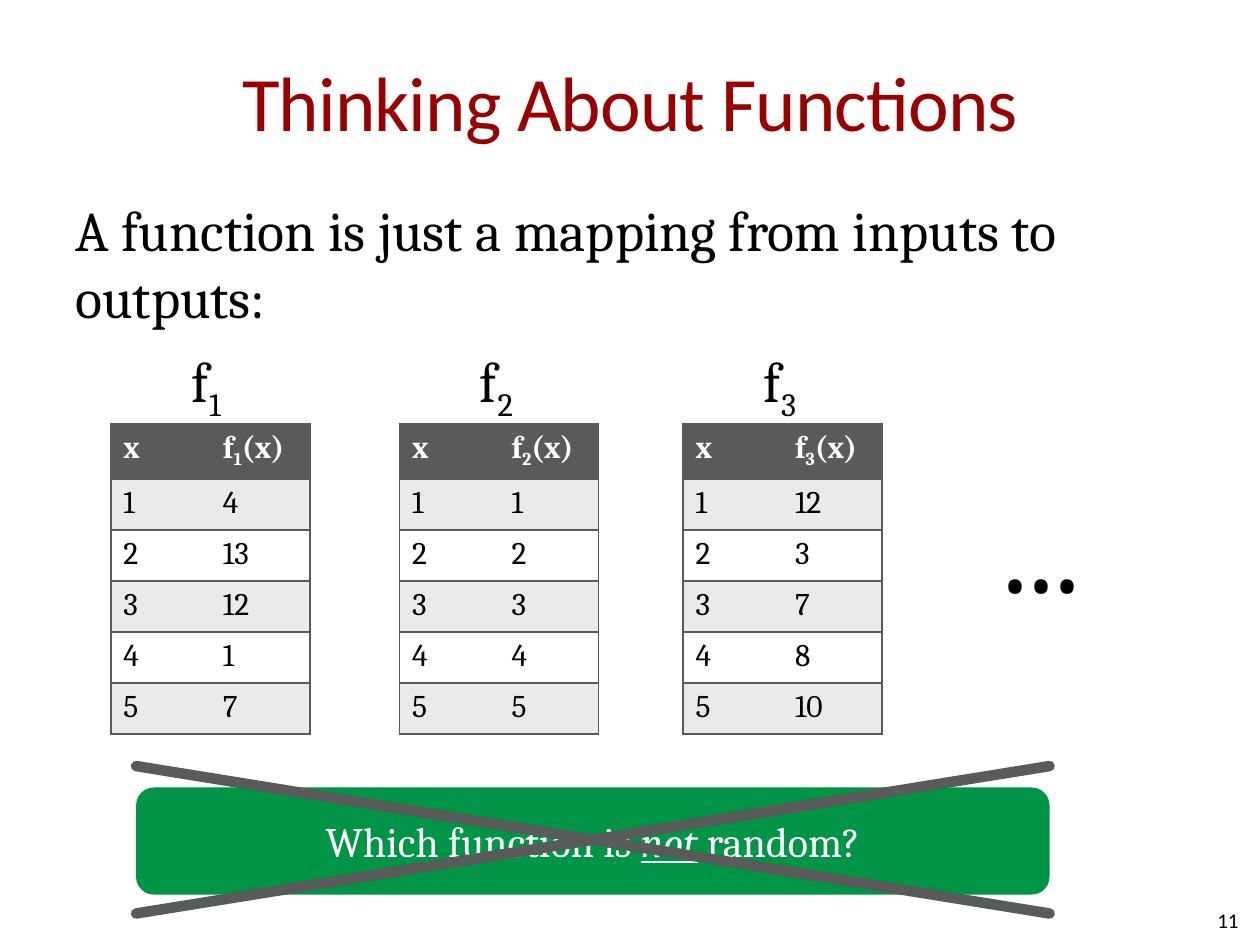
from pptx import Presentation
from pptx.dml.color import RGBColor
from pptx.enum.shapes import MSO_CONNECTOR, MSO_SHAPE
from pptx.enum.text import MSO_ANCHOR, PP_ALIGN
from pptx.oxml.ns import qn
from pptx.util import Inches, Pt
from lxml import etree

LEFT, MID, RIGHT = PP_ALIGN.LEFT, PP_ALIGN.CENTER, PP_ALIGN.RIGHT
TOP, CENTER = MSO_ANCHOR.TOP, MSO_ANCHOR.MIDDLE
ROUND, LINE = MSO_SHAPE.ROUNDED_RECTANGLE, MSO_CONNECTOR.STRAIGHT

# Content: a run is (text, style); style is "", "sub" or "stress"
TITLE = [("Thinking About Functions", "")]
LEAD = [("A function is just a mapping from inputs to outputs:", "")]
MAPS = [("1", [4, 13, 12, 1, 7]),
        ("2", [1, 2, 3, 4, 5]),
        ("3", [12, 3, 7, 8, 10])]
MORE = [("...", "")]
ASK = [("Which function is ", ""), ("not", "stress"), (" random?", "")]
PAGE = [("11", "")]

THEME = {
    "head": "Calibri", "body": "Cambria",
    "red": "990000", "ink": "000000", "paper": "FFFFFF",
    "gray": "595A5A", "band": "EAEAEA", "green": "009446",
    "title": 44, "lead": 32, "cell": 18, "ask": 24, "dots": 72, "page": 12,
    "rule": 1, "cross": 6,
}

# Layout in inches
WIDE, HIGH = 10, 7.5
EDGE = WIDE * 0.05
LEFTS = [0.88, 3.17, 5.42]
GRID_TOP, COL, ROW = 3.36, 0.79, 0.405
LABEL_TOP, LABEL_IN = 2.75, 0.64
BOX = (1.08, 6.25, 7.25, 0.85)
CROSS_TOP, CROSS_END = 6.08, 7.25


def color(name):
    return RGBColor.from_string(THEME[name])


def write(frame, runs, size, ink="ink", face="body", align=LEFT, bold=False):
    para = frame.paragraphs[0]
    para.alignment = align
    font = para.font
    font.name, font.size, font.bold = THEME[face], Pt(THEME[size]), bold
    font.color.rgb = color(ink)
    for text, style in runs:
        run = para.add_run()
        run.text = text
        if style == "sub":
            run.font._element.set("baseline", "-25000")
        elif style == "stress":
            run.font.italic = run.font.underline = True
    return para


def inset(frame, side, end):
    frame.margin_left = frame.margin_right = Inches(side)
    frame.margin_top = frame.margin_bottom = Inches(end)


def add_text(slide, place, runs, size, pad=(0, 0), anchor=TOP, wrap=True, **look):
    box = slide.shapes.add_textbox(*map(Inches, place))
    frame = box.text_frame
    frame.word_wrap, frame.vertical_anchor = wrap, anchor
    inset(frame, *pad)
    return write(frame, runs, size, **look)


def rule(cell, shown):
    """Draw the named sides of a cell and hide the others."""
    props = cell._tc.get_or_add_tcPr()
    for spot, side in enumerate("LRTB"):
        line = etree.Element(qn("a:ln" + side), w=str(Pt(THEME["rule"])))
        if side in shown:
            fill = etree.SubElement(line, qn("a:solidFill"))
            etree.SubElement(fill, qn("a:srgbClr"), val=THEME["gray"])
        else:
            etree.SubElement(line, qn("a:noFill"))
        props.insert(spot, line)


def add_map(slide, left, name, values):
    rows = [([("x", "")], [("f", ""), (name, "sub"), ("(x)", "")])]
    rows += [([(str(x), "")], [(str(y), "")]) for x, y in enumerate(values, 1)]
    place = (left, GRID_TOP, 2 * COL, ROW * len(rows))
    table = slide.shapes.add_table(len(rows), 2, *map(Inches, place)).table
    for r, row in enumerate(rows):
        head = r == 0
        back = "gray" if head else "band" if r % 2 else "paper"
        for c, runs in enumerate(row):
            cell = table.cell(r, c)
            cell.fill.solid()
            cell.fill.fore_color.rgb = color(back)
            write(cell.text_frame, runs, "cell",
                  ink="paper" if head else "ink", bold=head)
            rule(cell, "RTB" if c else "LTB")
    add_text(slide, (left + LABEL_IN, LABEL_TOP, 0.3, 0.54),
             [("f", ""), (name, "sub")], "lead", wrap=False)


def add_ask(slide):
    box = slide.shapes.add_shape(ROUND, *map(Inches, BOX))
    box.shadow.inherit = False
    box.fill.solid()
    box.fill.fore_color.rgb = color("green")
    box.line.fill.background()
    box.text_frame.vertical_anchor = CENTER
    box.text_frame.word_wrap = True
    inset(box.text_frame, 0, 0)
    write(box.text_frame, ASK, "ask", ink="paper", align=MID)


def add_cross(slide):
    group = slide.shapes.add_group_shape()
    left, right = BOX[0], BOX[0] + BOX[2]
    for start, end in ((CROSS_TOP, CROSS_END), (CROSS_END, CROSS_TOP)):
        ends = map(Inches, (left, start, right, end))
        bar = group.shapes.add_connector(LINE, *ends)
        bar.line.color.rgb = color("gray")
        bar.line.width = Pt(THEME["cross"])
        bar.line._ln.set("cap", "rnd")
        etree.SubElement(bar._element.spPr, qn("a:effectLst"))


def main():
    deck = Presentation()
    deck.slide_width, deck.slide_height = Inches(WIDE), Inches(HIGH)
    slide = deck.slides.add_slide(deck.slide_layouts[6])

    title = add_text(slide, (EDGE, 0.17, WIDE - 2 * EDGE, 1.25), TITLE, "title",
                     pad=(0, 0.05), anchor=CENTER, ink="red", face="head", align=MID)
    title.runs[0].font._element.set("spc", "-50")
    lead = add_text(slide, (EDGE, 1.5, WIDE - 2 * EDGE, 1.25), LEAD, "lead",
                    pad=(0.1, 0.05))
    lead.space_before = Pt(THEME["lead"] * 0.2)
    add_text(slide, (7.5, 7.1, 2.33, 0.4), PAGE, "page",
             anchor=CENTER, face="head", align=RIGHT)

    for left, (name, values) in zip(LEFTS, MAPS):
        add_map(slide, left, name, values)
    add_text(slide, (7.96, 3.71, 0.62, 1.21), MORE, "dots", wrap=False)
    add_ask(slide)
    add_cross(slide)
    deck.save("out.pptx")


if __name__ == "__main__":
    main()
